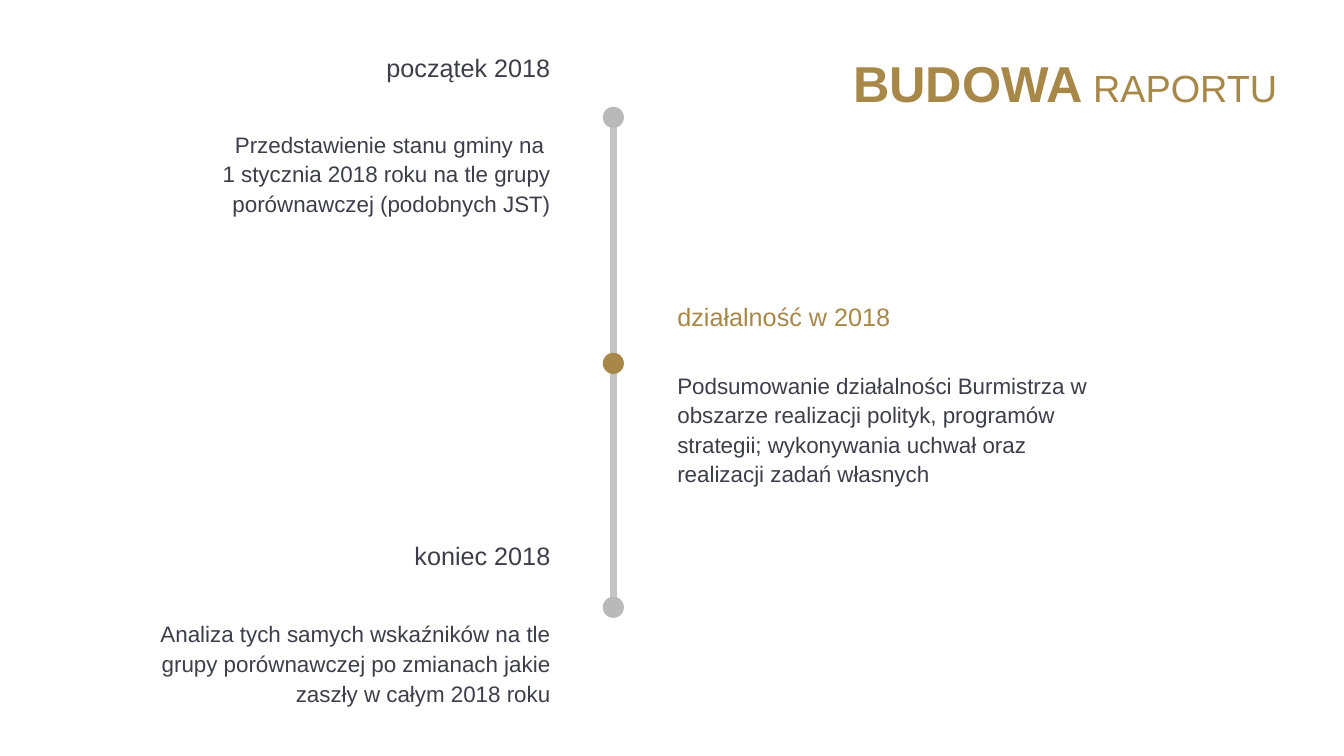
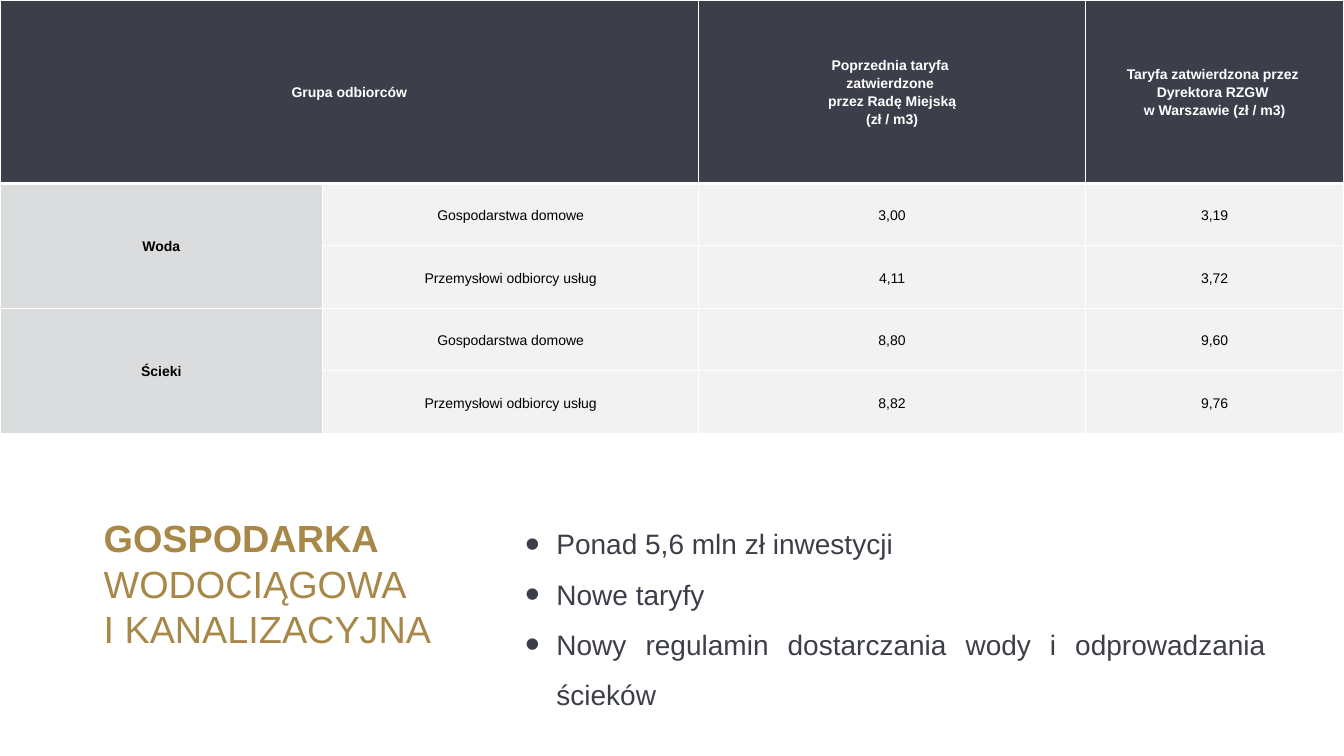
import copy

import lxml.etree
import pptx
import pptx.chart.data
import pptx.dml.color
import pptx.enum.shapes
import pptx.enum.text
import pptx.oxml
import pptx.oxml.ns
import pptx.util

SCALE = 9144  # EMU in one px, 100 px to the inch
FONT = "Arial"
GOLD, INK, WHITE, BLACK = "A88848", "3C3F49", "FFFFFF", "000000"
RAIL, DOT, GROUP, PALE = "C2C4C6", "B9B9B9", "DADCDD", "F2F2F2"
ALIGN = pptx.enum.text.PP_ALIGN
MIDDLE = pptx.enum.text.MSO_ANCHOR.MIDDLE
qn = pptx.oxml.ns.qn


def rgb(code):
    return pptx.dml.color.RGBColor.from_string(code)


def write(frame, paras, color, style):
    """Fill a frame with paragraphs, each a list of (text, size, bold) runs."""
    frame.word_wrap = True
    for index, runs in enumerate(paras):
        para = frame.paragraphs[0] if index == 0 else frame.add_paragraph()
        for key, value in style.items():
            setattr(para, key, value)
        for text, size, bold in runs:
            look = {"name": FONT, "size": pptx.util.Pt(size), "bold": bold}
            for row, line in enumerate(text.split("\n")):
                if row:
                    para.add_line_break()
                    # The break takes the size of the run before it
                    para._p[-1].append(copy.deepcopy(run._r.rPr))
                run = para.add_run()
                run.text = line
                for key, value in look.items():
                    setattr(run.font, key, value)
                run.font.color.rgb = rgb(color)


deck = pptx.Presentation()
deck.slide_width, deck.slide_height = 12192000, 750 * SCALE
blank = deck.slide_layouts[6]
edges = ("margin_left", "margin_top", "margin_right", "margin_bottom")

# Slide 1: timeline
slide = deck.slides.add_slide(blank)
axis = 609
rail = slide.shapes.add_connector(
    pptx.enum.shapes.MSO_CONNECTOR.STRAIGHT,
    *(n * SCALE for n in (axis, 605, axis, 113)))
rail.line.color.rgb = rgb(RAIL)
rail.line.width = pptx.util.Pt(5)
lxml.etree.SubElement(rail._element.spPr, qn("a:effectLst"))

for top, color in ((350, GOLD), (106, DOT), (592, DOT)):
    dot = slide.shapes.add_shape(
        pptx.enum.shapes.MSO_SHAPE.OVAL,
        *(n * SCALE for n in (axis - 11, top, 21, 21)))
    dot.shadow.inherit = False
    dot.fill.solid()
    dot.fill.fore_color.rgb = rgb(color)
    dot.line.fill.background()

stages = [
    (129, 18, 114, ALIGN.RIGHT, INK, "początek 2018",
     "Przedstawienie stanu gminy na \n1 stycznia 2018 roku na tle grupy "
     "porównawczej (podobnych JST)"),
    (672, 265, 368, ALIGN.LEFT, GOLD, "działalność w 2018",
     "Podsumowanie działalności Burmistrza w obszarze realizacji polityk, "
     "programów strategii; wykonywania uchwał oraz realizacji zadań własnych"),
    (129, 503, 600, ALIGN.RIGHT, INK, "koniec 2018",
     "Analiza tych samych wskaźników na tle grupy porównawczej po zmianach "
     "jakie zaszły w całym 2018 roku"),
]
for left, top, low, align, color, head, body in stages:
    head_style = {"alignment": align}
    body_style = {"alignment": align, "line_spacing": 1.1,
                  "space_before": pptx.util.Pt(30)}
    for y, high, text, size, tone, style in (
            (top, 97, head, 18, color, head_style),
            (low, 114, body, 16, INK, body_style)):
        box = slide.shapes.add_textbox(
            *(n * SCALE for n in (left, y, 417, high)))
        frame = box.text_frame
        frame.vertical_anchor = MIDDLE
        for edge in edges:
            setattr(frame, edge, 0)
        write(frame, [[(text, size, False)]], tone, style)

title = slide.shapes.add_textbox(*(n * SCALE for n in (546, 47, 731, 71)))
write(title.text_frame,
      [[("BUDOWA", 36, True), (" ", 27, True), ("RAPORTU", 27, False)]],
      GOLD, {"alignment": ALIGN.RIGHT})

# Slide 2: tariffs
slide = deck.slides.add_slide(blank)
points = slide.shapes.add_textbox(*(n * SCALE for n in (521, 506, 735, 210)))
frame = points.text_frame
for edge in edges:
    setattr(frame, edge, 0)
lines = ["Ponad 5,6 mln zł inwestycji", "Nowe taryfy",
         "Nowy regulamin dostarczania wody i odprowadzania ścieków"]
write(frame, [[(line, 20, False)] for line in lines], INK,
      {"alignment": ALIGN.JUSTIFY, "line_spacing": 1.5})
for para in frame.paragraphs:
    props = para._p.get_or_add_pPr()
    props.set("marL", str(31 * SCALE))
    props.set("indent", str(-31 * SCALE))
    for tag, key, value in (("a:buSzPct", "val", "150000"),
                            ("a:buFont", "typeface", FONT),
                            ("a:buChar", "char", "•")):
        lxml.etree.SubElement(props, qn(tag)).set(key, value)

title = slide.shapes.add_textbox(*(n * SCALE for n in (93, 506, 360, 146)))
write(title.text_frame,
      [[("GOSPODARKA", 27, True)],
       [("WODOCIĄGOWA \nI KANALIZACYJNA", 27, False)]],
      GOLD, {"alignment": ALIGN.LEFT})

# A bar in a cell parts its paragraphs
rows = [
    ["Grupa odbiorców", "",
     "Poprzednia taryfa \nzatwierdzone |przez Radę Miejską|(zł / m3)",
     "Taryfa zatwierdzona przez |Dyrektora RZGW \nw Warszawie (zł / m3)"],
    ["Woda", "Gospodarstwa domowe", "3,00", "3,19"],
    ["", "Przemysłowi odbiorcy usług", "4,11", "3,72"],
    ["Ścieki", "Gospodarstwa domowe", "8,80", "9,60"],
    ["", "Przemysłowi odbiorcy usług", "8,82", "9,76"],
]
widths, heights = (320, 373, 384, 256), (182, 62, 62, 62, 62)
table = slide.shapes.add_table(
    len(rows), len(widths), 0, 0,
    sum(widths) * SCALE, sum(heights) * SCALE).table
for col, width in zip(table.columns, widths):
    col.width = width * SCALE
for row, height in zip(table.rows, heights):
    row.height = height * SCALE

for r, row in enumerate(rows):
    for c, text in enumerate(row):
        cell = table.cell(r, c)
        cell.vertical_anchor = MIDDLE
        for edge, gap in zip(edges, (6, 5, 6, 5)):
            setattr(cell, edge, gap * SCALE)
        props = cell._tc.get_or_add_tcPr()
        for side in "LRTB":
            thick = (r, side) in ((0, "B"), (1, "T"))
            line = lxml.etree.SubElement(props, qn("a:ln" + side))
            line.set("w", str(pptx.util.Pt(3 if thick else 1)))
            fill = lxml.etree.SubElement(line, qn("a:solidFill"))
            lxml.etree.SubElement(fill, qn("a:srgbClr")).set("val", WHITE)
        cell.fill.solid()
        cell.fill.fore_color.rgb = rgb(
            INK if r == 0 else GROUP if c == 0 else PALE)
        bold = r == 0 or c == 0
        if text:
            write(cell.text_frame,
                  [[(part, 10, bold)] for part in text.split("|")],
                  WHITE if r == 0 else BLACK,
                  {"alignment": ALIGN.CENTER, "line_spacing": 1.15})
for first, last in (((0, 0), (0, 1)), ((1, 0), (2, 0)), ((3, 0), (4, 0))):
    table.cell(*first).merge(table.cell(*last))

deck.save("out.pptx")
